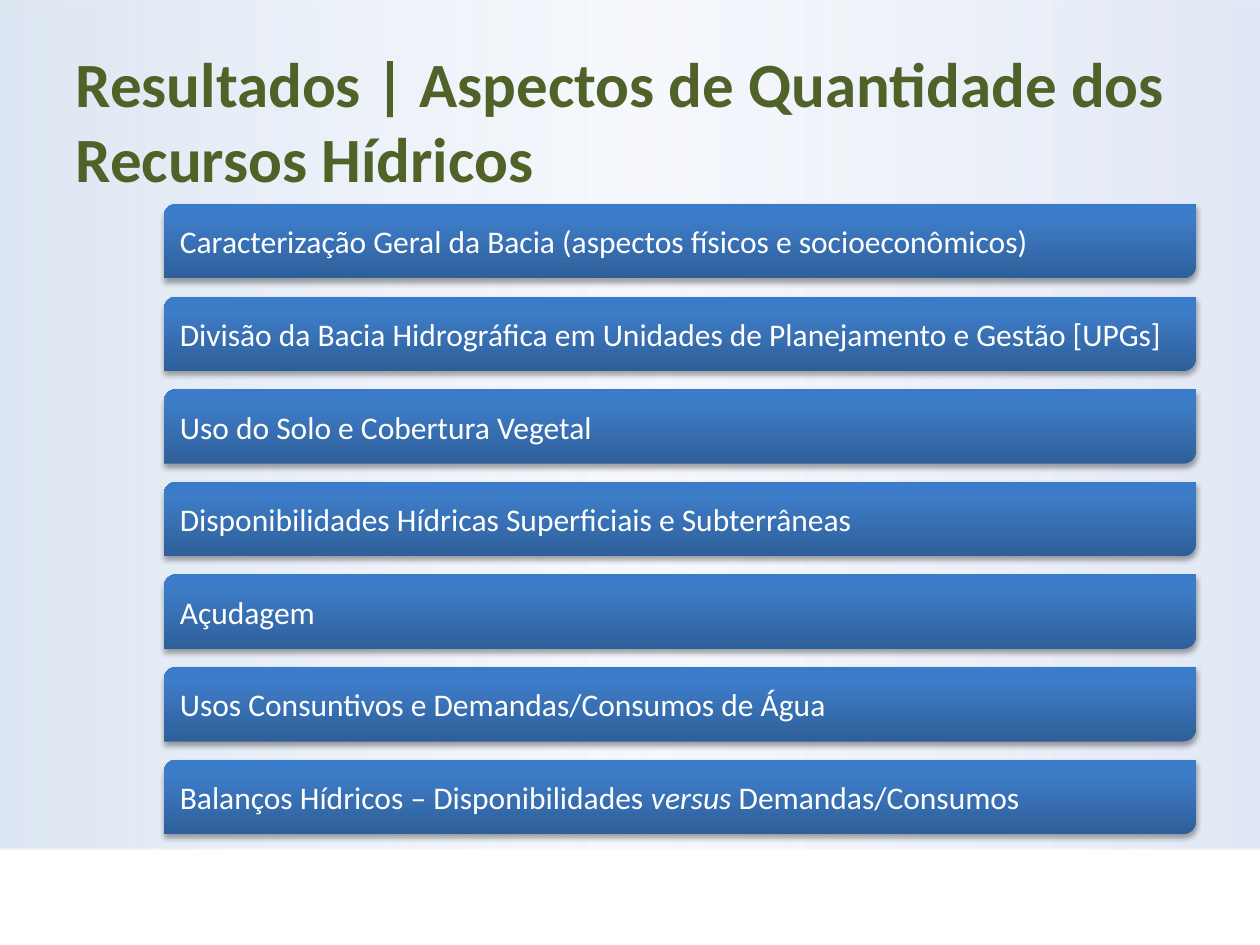
from dataclasses import dataclass

from pptx import Presentation
from pptx.dml.color import RGBColor
from pptx.enum.shapes import MSO_SHAPE
from pptx.enum.text import MSO_ANCHOR, MSO_AUTO_SIZE, PP_ALIGN
from pptx.oxml import parse_xml
from pptx.oxml.ns import nsdecls, qn
from pptx.shapes.autoshape import Shape
from pptx.slide import Slide
from pptx.util import Inches, Pt

RECTANGLE = MSO_SHAPE.RECTANGLE
TOPIC_SHAPE = MSO_SHAPE.ROUND_2_DIAG_RECTANGLE
LEFT = PP_ALIGN.LEFT
TOP, MIDDLE = MSO_ANCHOR.TOP, MSO_ANCHOR.MIDDLE
NO_AUTOFIT = MSO_AUTO_SIZE.NONE


@dataclass(frozen=True)
class Stop:
    position: int  # percent
    color: str
    opacity: int = 100  # percent


@dataclass(frozen=True)
class Theme:
    font: str = "Calibri"
    title_size: int = 36
    topic_size: int = 18
    title_color: str = "4F6228"
    topic_color: str = "FFFFFF"
    backdrop: tuple[Stop, ...] = (
        Stop(0, "DCE6F2"), Stop(50, "ECF1FA", 46), Stop(100, "E1E8F5"))
    bar: tuple[Stop, ...] = (
        Stop(0, "2F5F99"), Stop(80, "3D7CC7"), Stop(100, "3A7CCB"))


@dataclass(frozen=True)
class Topic:
    text: str
    after_italic: str = ""
    italic: str = ""


THEME = Theme()
TITLE = "Resultados | Aspectos de Quantidade dos Recursos Hídricos"
TOPICS = (
    Topic("Caracterização Geral da Bacia (aspectos físicos e socioeconômicos)"),
    Topic("Divisão da Bacia Hidrográfica em Unidades de Planejamento e Gestão [UPGs]"),
    Topic("Uso do Solo e Cobertura Vegetal"),
    Topic("Disponibilidades Hídricas Superficiais e Subterrâneas"),
    Topic("Açudagem"),
    Topic("Usos Consuntivos e Demandas/Consumos de Água"),
    Topic("Balanços Hídricos – Disponibilidades ",
          italic="versus", after_italic=" Demandas/Consumos"),
)
FIRST_TOP, PITCH = 1.62, 0.735


def fill_gradient(shape: Shape, stops: tuple[Stop, ...], angle: int) -> None:
    """Fill with a linear gradient; the angle is clockwise in degrees."""
    shape.fill.gradient()
    stop_xml = "".join(
        f'<a:gs pos="{stop.position * 1000}"><a:srgbClr val="{stop.color}">'
        f'<a:alpha val="{stop.opacity * 1000}"/></a:srgbClr></a:gs>'
        for stop in stops)
    gradient = parse_xml(
        f'<a:gradFill {nsdecls("a")} rotWithShape="1"><a:gsLst>{stop_xml}</a:gsLst>'
        f'<a:lin ang="{angle * 60000}" scaled="0"/></a:gradFill>')
    properties = shape.element.spPr
    properties.replace(properties.find(qn("a:gradFill")), gradient)


def add_shadow(shape: Shape) -> None:
    effects = shape.element.spPr.find(qn("a:effectLst"))
    effects.append(parse_xml(
        f'<a:outerShdw {nsdecls("a")} blurRad="{Pt(3.1)}" dist="{Pt(1.8)}" '
        'dir="5400000" rotWithShape="0"><a:srgbClr val="000000">'
        '<a:alpha val="35000"/></a:srgbClr></a:outerShdw>'))


def add_panel(page: Slide, kind: MSO_SHAPE, left: float, top: float,
              width: float, height: float) -> Shape:
    """Add a shape without outline or shadow."""
    panel = page.shapes.add_shape(
        kind, Inches(left), Inches(top), Inches(width), Inches(height))
    panel.shadow.inherit = False
    panel.line.fill.background()
    return panel


def add_topic(page: Slide, topic: Topic, top: float) -> None:
    bar = add_panel(page, TOPIC_SHAPE, 1.3, top, 8.19, 0.59)
    fill_gradient(bar, THEME.bar, 270)
    add_shadow(bar)
    bar.text_frame.word_wrap = True
    bar.text_frame.vertical_anchor = MIDDLE
    para = bar.text_frame.paragraphs[0]
    para.text = topic.text
    para.alignment = LEFT
    para.space_after = Pt(12)
    if topic.italic:
        span = para.add_run()
        span.text = topic.italic
        span.font.italic = True
        para.add_run().text = topic.after_italic
    for span in para.runs:
        span.font.name = THEME.font
        span.font.size = Pt(THEME.topic_size)
        span.font.color.rgb = RGBColor.from_string(THEME.topic_color)


def format_title(title: Shape) -> None:
    title.left, title.top = Inches(0.5), Inches(0.3)
    title.width, title.height = Inches(9), Inches(0.85)
    frame = title.text_frame
    frame.text = TITLE
    frame.word_wrap = True
    frame.auto_size = NO_AUTOFIT
    frame.vertical_anchor = TOP
    para = frame.paragraphs[0]
    para.alignment = LEFT
    font = para.runs[0].font
    font.name = THEME.font
    font.size = Pt(THEME.title_size)
    font.bold = True
    font.color.rgb = RGBColor.from_string(THEME.title_color)


def main() -> None:
    deck = Presentation()
    deck.slide_width, deck.slide_height = Inches(10), Inches(7.5)
    page = deck.slides.add_slide(deck.slide_layouts[5])

    # Title
    title = page.shapes.title
    format_title(title)

    # Backdrop, placed behind the title
    backdrop = add_panel(page, RECTANGLE, 0, 0, 10, 6.74)
    fill_gradient(backdrop, THEME.backdrop, 0)
    title.element.addprevious(backdrop.element)

    # Topic bars
    for row, topic in enumerate(TOPICS):
        add_topic(page, topic, FIRST_TOP + row * PITCH)

    deck.save("out.pptx")


if __name__ == "__main__":
    main()
